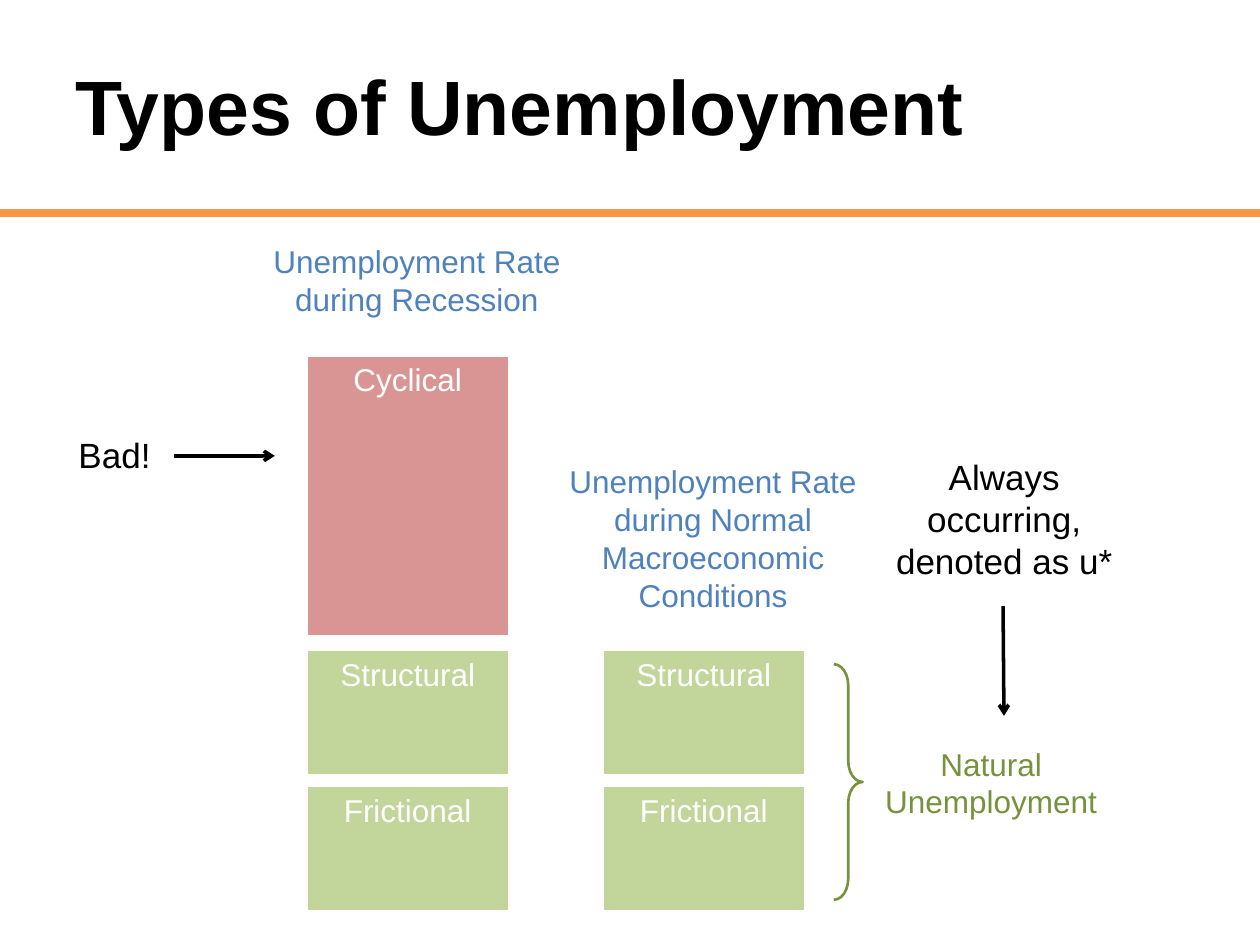
from dataclasses import dataclass

from lxml import etree
from pptx import Presentation
from pptx.dml.color import RGBColor
from pptx.enum.shapes import MSO_CONNECTOR, MSO_SHAPE
from pptx.enum.text import MSO_ANCHOR, PP_ALIGN
from pptx.oxml.ns import qn
from pptx.util import Cm, Pt

BLACK = RGBColor(0x00, 0x00, 0x00)
WHITE = RGBColor(0xFF, 0xFF, 0xFF)
ORANGE = RGBColor(0xF7, 0x96, 0x46)
BLUE = RGBColor(0x4F, 0x81, 0xBD)
RED = RGBColor(0xD9, 0x95, 0x94)
LIGHT_GREEN = RGBColor(0xC2, 0xD6, 0x9B)
GREEN = RGBColor(0x76, 0x92, 0x3C)

FONT = "Arial"
BAR_WIDTH = 4.14
RECESSION_LEFT, NORMAL_LEFT = 6.15, 12.12


@dataclass
class Bar:
    text: str
    top: float
    height: float
    fill: RGBColor


@dataclass
class Label:
    text: str
    left: float
    top: float
    width: float
    height: float
    size: int
    color: RGBColor


@dataclass
class Line:
    start: tuple[float, float]
    end: tuple[float, float]
    color: RGBColor
    weight: float
    arrow: bool = False


NATURAL_BARS = [
    Bar("Frictional", 15.82, 2.57, LIGHT_GREEN),
    Bar("Structural", 13.08, 2.57, LIGHT_GREEN),
]
CYCLICAL_BAR = Bar("Cyclical", 7.14, 5.72, RED)
COLUMNS = {
    NORMAL_LEFT: NATURAL_BARS,
    RECESSION_LEFT: NATURAL_BARS + [CYCLICAL_BAR],
}
LABELS = [
    Label("Unemployment Rate during Recession", 5.38, 4.88, 6.05, 1.8, 18, BLUE),
    Label("Unemployment Rate during Normal Macroeconomic Conditions",
          11.15, 9.32, 6.45, 3.4, 18, BLUE),
    Label("Natural Unemployment", 17.4, 15.01, 5.16, 2.06, 18, GREEN),
    Label("Bad!", 0.81, 8.74, 3, 0.81, 20, BLACK),
    Label("Always occurring, denoted as u*", 17.78, 9.19, 4.93, 2.9, 20, BLACK),
]
TITLE_RULE = Line((0, 4.29), (25.4, 4.29), ORANGE, 4.5)
ARROWS = [
    Line((3.51, 9.19), (5.54, 9.19), BLACK, 2, True),
    Line((20.22, 12.22), (20.24, 14.43), BLACK, 2, True),
]


def write(shape, text: str, size: int, color: RGBColor,
          align=PP_ALIGN.CENTER, anchor=MSO_ANCHOR.TOP, bold: bool = False) -> None:
    frame = shape.text_frame
    frame.text = text
    frame.word_wrap = True
    frame.vertical_anchor = anchor
    para = frame.paragraphs[0]
    para.alignment = align
    font = para.runs[0].font
    font.name, font.size, font.bold = FONT, Pt(size), bold
    font.color.rgb = color


def add_title(page, text: str) -> None:
    box = page.shapes.add_textbox(Cm(1.27), 0, Cm(22.86), Cm(4.24))
    write(box, text, 44, BLACK, PP_ALIGN.LEFT, MSO_ANCHOR.MIDDLE, bold=True)


def add_bar(page, bar: Bar, left: float) -> None:
    shape = page.shapes.add_shape(
        MSO_SHAPE.RECTANGLE, Cm(left), Cm(bar.top), Cm(BAR_WIDTH), Cm(bar.height))
    shape.shadow.inherit = False
    shape.fill.solid()
    shape.fill.fore_color.rgb = bar.fill
    shape.line.color.rgb = WHITE
    shape.line.width = Pt(3)
    write(shape, bar.text, 18, WHITE)


def add_label(page, label: Label) -> None:
    shape = page.shapes.add_shape(
        MSO_SHAPE.RECTANGLE, Cm(label.left), Cm(label.top),
        Cm(label.width), Cm(label.height))
    shape.shadow.inherit = False
    shape.fill.solid()
    shape.fill.fore_color.rgb = WHITE
    shape.line.fill.background()
    frame = shape.text_frame
    frame.margin_left = frame.margin_right = frame.margin_top = frame.margin_bottom = 0
    write(shape, label.text, label.size, label.color)


def add_brace(page) -> None:
    """Bracket the two bars that make up natural unemployment."""
    brace = page.shapes.add_shape(
        MSO_SHAPE.RIGHT_BRACE, Cm(16.81), Cm(13.39), Cm(0.58), Cm(4.75))
    brace.shadow.inherit = False
    brace.adjustments[0] = 0.73
    brace.fill.background()
    brace.line.color.rgb = GREEN
    brace.line.width = Pt(1.5)


def add_line(page, line: Line) -> None:
    connector = page.shapes.add_connector(
        MSO_CONNECTOR.STRAIGHT, *(Cm(value) for value in line.start + line.end))
    connector.line.color.rgb = line.color
    connector.line.width = Pt(line.weight)
    properties = connector._element.spPr
    if line.arrow:
        etree.SubElement(properties.find(qn("a:ln")), qn("a:tailEnd"), type="arrow")
    etree.SubElement(properties, qn("a:effectLst"))


def main() -> None:
    deck = Presentation()
    deck.slide_width, deck.slide_height = Cm(25.4), Cm(19.05)
    page = deck.slides.add_slide(deck.slide_layouts[6])
    add_line(page, TITLE_RULE)
    add_title(page, "Types of Unemployment")
    for left, bars in COLUMNS.items():
        for bar in bars:
            add_bar(page, bar, left)
    for label in LABELS:
        add_label(page, label)
    add_brace(page)
    for arrow in ARROWS:
        add_line(page, arrow)
    deck.save("out.pptx")


if __name__ == "__main__":
    main()
